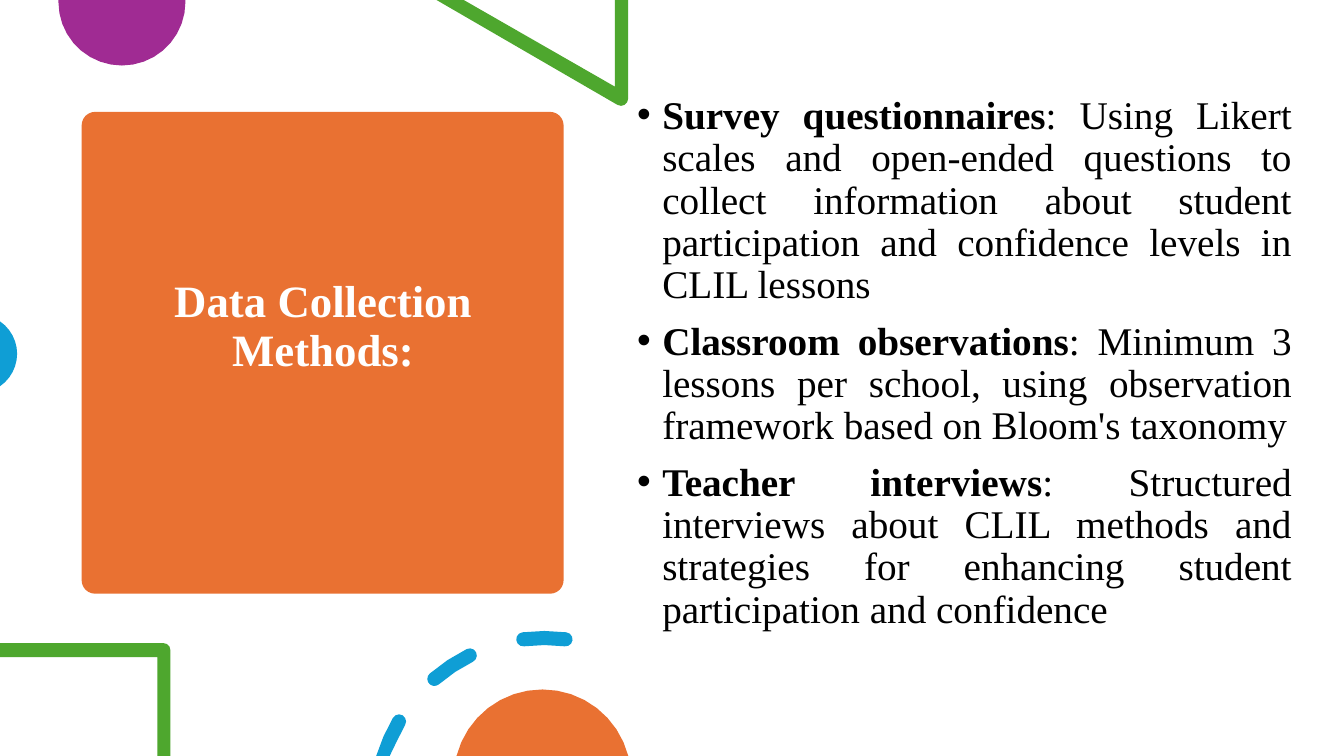
import math

import pptx
import pptx.dml.color
import pptx.enum.text
import pptx.oxml
import pptx.oxml.ns
import pptx.util
from pptx.enum.shapes import MSO_SHAPE

Inches = pptx.util.Inches
RGBColor = pptx.dml.color.RGBColor

WIDTH, HEIGHT = 13.33, 7.5
FONT = "Times New Roman"
ORANGE = RGBColor(0xE9, 0x71, 0x32)
PURPLE = RGBColor(0xA0, 0x2B, 0x93)
GREEN = RGBColor(0x4E, 0xA7, 0x2E)
BLUE = RGBColor(0x0F, 0x9E, 0xD5)
WHITE = RGBColor(0xFF, 0xFF, 0xFF)
BLACK = RGBColor(0x00, 0x00, 0x00)

METHODS = [
    ("Survey questionnaires",
     ": Using Likert scales and open-ended questions to collect information "
     "about student participation and confidence levels in CLIL lessons"),
    ("Classroom observations",
     ": Minimum 3 lessons per school, using observation framework based on "
     "Bloom's taxonomy"),
    ("Teacher interviews",
     ": Structured interviews about CLIL methods and strategies for "
     "enhancing student participation and confidence"),
]
DASH_CENTER = (5.4, 8.0)
DASH_RADIUS = 1.67
DASH_HALF_WIDTH = 0.07
DASH_ANGLES = [(196.5, 210.3), (229.2, 243.7), (262.8, 277.2)]


def paint(shape, color):
    """Give a shape a plain fill without line or shadow."""
    shape.shadow.inherit = False
    shape.fill.solid()
    shape.fill.fore_color.rgb = color
    shape.line.fill.background()


def polar(center, radius, degrees):
    """Return the point at an angle, clockwise from the right."""
    angle = math.radians(degrees)
    return (center[0] + radius * math.cos(angle),
            center[1] + radius * math.sin(angle))


def arc(center, radius, start, end, step=10):
    """Return points along an arc, about one for each step in degrees."""
    count = math.ceil(abs(end - start) / step)
    return [polar(center, radius, start + (end - start) * index / count)
            for index in range(count + 1)]


def dash(start, end):
    """Return the outline of a round-ended dash, cut at the slide's bottom."""
    first_cap = polar(DASH_CENTER, DASH_RADIUS, start)
    last_cap = polar(DASH_CENTER, DASH_RADIUS, end)
    points = (arc(DASH_CENTER, DASH_RADIUS + DASH_HALF_WIDTH, start, end)
              + arc(last_cap, DASH_HALF_WIDTH, end, end + 180, 30)[1:-1]
              + arc(DASH_CENTER, DASH_RADIUS - DASH_HALF_WIDTH, end, start))
    if first_cap[1] < HEIGHT:
        points += arc(first_cap, DASH_HALF_WIDTH, start + 180, start + 360, 30)[1:-1]
    return [(x, min(y, HEIGHT)) for x, y in points]


def add_outline(slide, color, *contours):
    """Draw one filled freeform from closed contours."""
    contours = [[(Inches(x), Inches(y)) for x, y in contour]
                for contour in contours]
    builder = slide.shapes.build_freeform(*contours[0][0])
    for index, contour in enumerate(contours):
        if index:
            builder.move_to(*contour[0])
        builder.add_line_segments(contour[1:], close=True)
    paint(builder.convert_to_shape(), color)


def add_card(slide):
    """Draw the rounded square behind the title."""
    card = slide.shapes.add_shape(MSO_SHAPE.ROUNDED_RECTANGLE, Inches(0.81),
                                  Inches(1.11), Inches(4.78), Inches(4.78))
    card.adjustments[0] = 0.028
    paint(card, ORANGE)
    slide.shapes.title._element.addprevious(card._element)


def format_run(run, size, color, bold):
    """Set the font of a run."""
    run.font.name = FONT
    run.font.size = pptx.util.Pt(size)
    run.font.color.rgb = color
    run.font.bold = bold


def place_title(slide):
    """Place and format the title over the card."""
    title = slide.shapes.title
    title.left, title.top = Inches(1.05), Inches(1.22)
    title.width, title.height = Inches(4.31), Inches(4.56)
    frame = title.text_frame
    frame.text = "Data Collection Methods:"
    frame.word_wrap = True
    frame.vertical_anchor = pptx.enum.text.MSO_ANCHOR.MIDDLE
    frame.margin_bottom = Inches(0.55)
    paragraph = frame.paragraphs[0]
    paragraph.alignment = pptx.enum.text.PP_ALIGN.CENTER
    paragraph.line_spacing = 0.9
    format_run(paragraph.runs[0], 32, WHITE, True)


def add_bullet(paragraph):
    """Give a paragraph a hanging round bullet."""
    properties = paragraph._p.get_or_add_pPr()
    properties.set("marL", str(Inches(0.25)))
    properties.set("indent", str(-Inches(0.25)))
    for tag, name, value in (("a:buFont", "typeface", "Arial"),
                             ("a:buChar", "char", "•")):
        element = pptx.oxml.parse_xml(
            f'<{tag} {pptx.oxml.ns.nsdecls("a")} {name}="{value}"/>')
        properties.append(element)


def add_methods(slide):
    """Write the justified list of methods."""
    box = slide.shapes.add_textbox(Inches(6.22), Inches(0.9),
                                   Inches(6.69), Inches(6.03))
    frame = box.text_frame
    frame.word_wrap = True
    for index, (name, description) in enumerate(METHODS):
        paragraph = frame.add_paragraph() if index else frame.paragraphs[0]
        paragraph.alignment = pptx.enum.text.PP_ALIGN.JUSTIFY
        paragraph.line_spacing = 0.9
        paragraph.space_before = pptx.util.Pt(10)
        add_bullet(paragraph)
        for text, bold in ((name, True), (description, False)):
            run = paragraph.add_run()
            run.text = text
            format_run(run, 28, BLACK, bold)


def main():
    """Build and save the slide."""
    presentation = pptx.Presentation()
    presentation.slide_width = Inches(WIDTH)
    presentation.slide_height = Inches(HEIGHT)
    slide = presentation.slides.add_slide(presentation.slide_layouts[5])
    add_card(slide)
    place_title(slide)
    add_outline(slide, PURPLE,
                [(1.84, 0)] + arc((1.21, 0.02), 0.63, 0, 180) + [(0.58, 0)])
    add_outline(slide, GREEN,
                [(4.33, 0), (4.6, 0), (6.1, 0.86), (6.1, 0), (6.23, 0)]
                + arc((6.16, 0.98), 0.07, 0, 120, 30))
    add_outline(slide, BLUE, arc((-0.22, 3.51), 0.39, -55.5, 55.5))
    add_methods(slide)
    add_outline(slide, GREEN,
                [(0, 6.38)] + arc((1.62, 6.45), 0.07, 270, 360, 30)
                + [(1.69, HEIGHT), (1.56, HEIGHT), (1.56, 6.52), (0, 6.52)])
    add_outline(slide, BLUE, *(dash(start, end) for start, end in DASH_ANGLES))
    add_outline(slide, ORANGE, arc((5.38, 7.72), 0.88, 194.5, 345.5))
    presentation.save("out.pptx")


if __name__ == "__main__":
    main()
